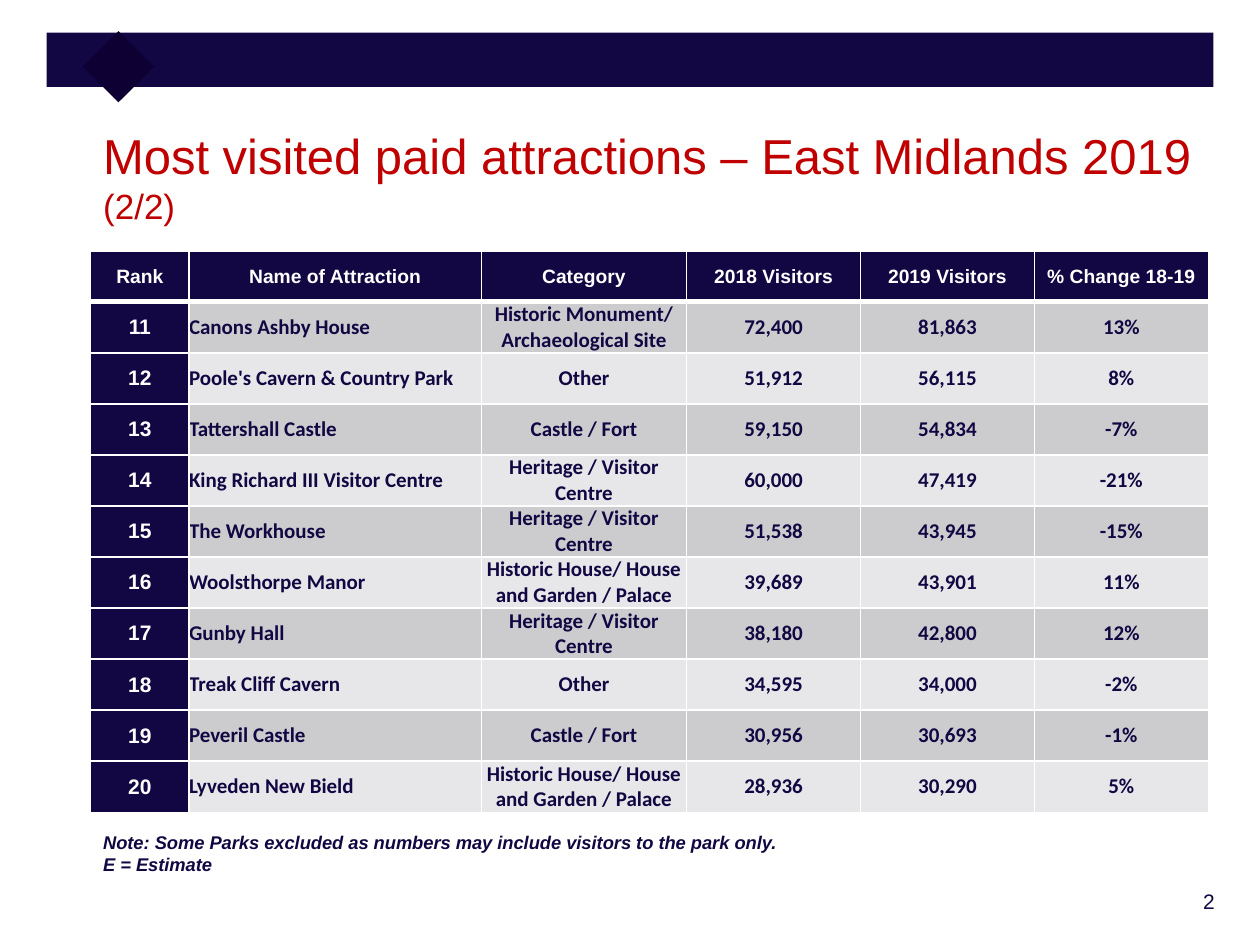
from typing import NamedTuple

from lxml.etree import SubElement
from pptx import Presentation
from pptx.dml.color import RGBColor
from pptx.enum.shapes import MSO_SHAPE as Shape
from pptx.enum.text import MSO_ANCHOR as Anchor, PP_ALIGN as Align
from pptx.oxml.ns import qn
from pptx.util import Inches, Pt

NAVY = RGBColor(0x12, 0x07, 0x42)
DARK_NAVY = RGBColor(0x0E, 0x00, 0x33)
RED = RGBColor(0xC0, 0x00, 0x00)
WHITE = RGBColor(0xFF, 0xFF, 0xFF)
BAND_DARK = RGBColor(0xCC, 0xCC, 0xCF)
BAND_LIGHT = RGBColor(0xE7, 0xE7, 0xE9)


class Attraction(NamedTuple):
    rank: str
    name: str
    category: str
    visitors_2018: str
    visitors_2019: str
    change: str


HEADINGS = ("Rank", "Name of Attraction", "Category",
            "2018 Visitors", "2019 Visitors", "% Change 18-19")
COLUMN_WIDTHS = (0.78, 2.32, 1.63, 1.38, 1.38, 1.38)
TABLE_HEIGHT = 4.46

MONUMENT = "Historic Monument/ Archaeological Site"
HOUSE = "Historic House/ House and Garden / Palace"
HERITAGE = "Heritage / Visitor Centre"
CASTLE = "Castle / Fort"
OTHER = "Other"

ATTRACTIONS = (
    Attraction("11", "Canons Ashby House", MONUMENT, "72,400", "81,863", "13%"),
    Attraction("12", "Poole's Cavern & Country Park", OTHER, "51,912", "56,115", "8%"),
    Attraction("13", "Tattershall Castle", CASTLE, "59,150", "54,834", "-7%"),
    Attraction("14", "King Richard III Visitor Centre", HERITAGE, "60,000", "47,419", "-21%"),
    Attraction("15", "The Workhouse", HERITAGE, "51,538", "43,945", "-15%"),
    Attraction("16", "Woolsthorpe Manor", HOUSE, "39,689", "43,901", "11%"),
    Attraction("17", "Gunby Hall", HERITAGE, "38,180", "42,800", "12%"),
    Attraction("18", "Treak Cliff Cavern", OTHER, "34,595", "34,000", "-2%"),
    Attraction("19", "Peveril Castle", CASTLE, "30,956", "30,693", "-1%"),
    Attraction("20", "Lyveden New Bield", HOUSE, "28,936", "30,290", "5%"),
)


def add_span(para, text: str, *, size: float, font: str = "Arial",
             color: RGBColor = NAVY, bold: bool = False, italic: bool = False,
             align: Align = Align.LEFT) -> None:
    para.alignment = align
    span = para.add_run()
    span.text = text
    span.font.size = Pt(size)
    span.font.name = font
    span.font.color.rgb = color
    span.font.bold = bold
    span.font.italic = italic


def add_rectangle(page, left: float, top: float, width: float, height: float,
                  color: RGBColor, rotation: float = 0) -> None:
    box = page.shapes.add_shape(Shape.RECTANGLE, Inches(left), Inches(top),
                                Inches(width), Inches(height))
    box.shadow.inherit = False
    box.fill.solid()
    box.fill.fore_color.rgb = color
    box.line.fill.background()
    box.rotation = rotation


def add_text_frame(page, left: float, top: float, width: float, height: float,
                   anchor: Anchor = Anchor.TOP):
    box = page.shapes.add_textbox(Inches(left), Inches(top),
                                  Inches(width), Inches(height))
    box.text_frame.word_wrap = True
    box.text_frame.vertical_anchor = anchor
    return box.text_frame


def set_borders(cell, top: float, bottom: float) -> None:
    """Draw white borders; call before the fill, which must follow them in the XML."""
    properties = cell._tc.get_or_add_tcPr()
    for side, width in (("L", 1), ("R", 1), ("T", top), ("B", bottom)):
        line = SubElement(properties, qn(f"a:ln{side}"), w=str(Pt(width)))
        fill = SubElement(line, qn("a:solidFill"))
        SubElement(fill, qn("a:srgbClr"), val=str(WHITE))


def fill_cell(cell, row: int, column: int, text: str) -> None:
    set_borders(cell, top=3 if row == 1 else 1, bottom=3 if row == 0 else 1)
    cell.vertical_anchor = Anchor.MIDDLE
    cell.fill.solid()
    para = cell.text_frame.paragraphs[0]
    if row == 0 or column == 0:
        cell.fill.fore_color.rgb = NAVY
        add_span(para, text, size=11 if row == 0 else 12, color=WHITE,
                 bold=True, align=Align.CENTER)
        return
    cell.fill.fore_color.rgb = BAND_DARK if row % 2 else BAND_LIGHT
    cell.margin_left = cell.margin_right = cell.margin_top = cell.margin_bottom = 0
    add_span(para, text, size=12, font="Calibri", bold=True,
             align=Align.LEFT if column == 1 else Align.CENTER)


def add_attraction_table(page) -> None:
    rows = (HEADINGS, *ATTRACTIONS)
    table = page.shapes.add_table(
        len(rows), len(HEADINGS), Inches(0.72), Inches(1.99),
        Inches(sum(COLUMN_WIDTHS)), Inches(TABLE_HEIGHT)).table
    table.first_col = True
    for column, width in zip(table.columns, COLUMN_WIDTHS):
        column.width = Inches(width)
    for row, values in enumerate(rows):
        table.rows[row].height = Inches(TABLE_HEIGHT / len(rows))
        for column, text in enumerate(values):
            fill_cell(table.cell(row, column), row, column, text)


def main() -> None:
    deck = Presentation()
    deck.slide_width, deck.slide_height = Inches(10), Inches(7.5)
    page = deck.slides.add_slide(deck.slide_layouts[6])

    number = add_text_frame(page, 8.53, 7, 1.21, 0.36)
    add_span(number.paragraphs[0], "2", size=12, align=Align.RIGHT)

    add_rectangle(page, 0.37, 0.26, 9.26, 0.43, NAVY)
    add_rectangle(page, 0.74, 0.33, 0.4, 0.4, DARK_NAVY, rotation=45)

    title = add_text_frame(page, 0.72, 0.95, 8.91, 0.89, Anchor.MIDDLE).paragraphs[0]
    add_span(title, "Most visited paid attractions – East Midlands 2019",
             size=28, color=RED)
    title.add_line_break()
    add_span(title, "(2/2)", size=20, color=RED)

    add_attraction_table(page)

    note = add_text_frame(page, 0.72, 6.55, 8.65, 0.45)
    add_span(note.paragraphs[0],
             "Note: Some Parks excluded as numbers may include visitors to the park only.",
             size=10.5, bold=True, italic=True)
    add_span(note.add_paragraph(), "E = Estimate", size=10.5, bold=True, italic=True)

    deck.save("out.pptx")


if __name__ == "__main__":
    main()
